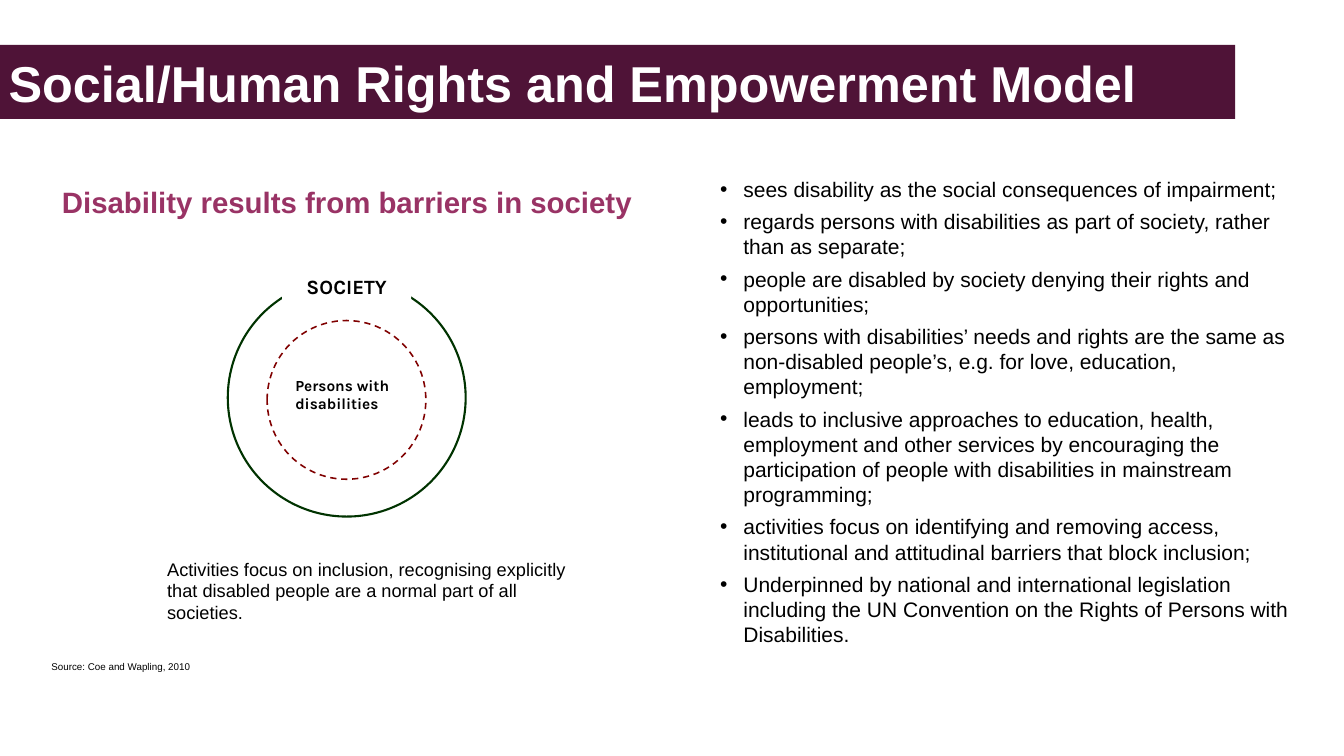
from dataclasses import dataclass

from lxml import etree
from pptx import Presentation
from pptx import util as u
from pptx.dml.color import RGBColor
from pptx.enum import dml, shapes, text
from pptx.oxml.ns import qn


@dataclass(frozen=True)
class Theme:
    """Colours, fonts and type sizes of the slide."""
    ink: str = "000000"
    paper: str = "FFFFFF"
    banner: str = "4F1337"
    accent: str = "993365"
    society: str = "003300"
    persons: str = "800000"
    body_font: str = "Arial"
    diagram_font: str = "Karla"
    title_size: int = 72
    heading_size: int = 42
    list_size: int = 30
    society_size: int = 29
    caption_size: int = 26
    persons_size: int = 22
    source_size: int = 14


@dataclass(frozen=True)
class Box:
    """A rectangle in inches."""
    left: float
    top: float
    width: float
    height: float

    def share(self, left, top, width, height):
        """Return an inner box given in percent of this one."""
        return Box(self.left + self.width * left / 100,
                   self.top + self.height * top / 100,
                   self.width * width / 100, self.height * height / 100)

    def emu(self):
        """Return left, top, width and height as lengths."""
        return [u.Inches(v) for v in (self.left, self.top, self.width, self.height)]


THEME = Theme()
SLIDE = Box(0, 0, 26.67, 15)
POINTS = [
    "sees disability as the social consequences of impairment;",
    "regards persons with disabilities as part of society, rather than as separate;",
    "people are disabled by society denying their rights and opportunities;",
    "persons with disabilities’ needs and rights are the same as non-disabled "
    "people’s, e.g. for love, education, employment;",
    "leads to inclusive approaches to education, health, employment and other services "
    "by encouraging the participation of people with disabilities in mainstream programming;",
    "activities focus on identifying and removing access, institutional and attitudinal "
    "barriers that block inclusion;",
    "Underpinned by national and international legislation including the UN Convention "
    "on the Rights of Persons with Disabilities.",
]


def rgb(value):
    """Turn a hex string into a colour."""
    return RGBColor.from_string(value)


def place(placeholder, box):
    """Move a placeholder into a box."""
    placeholder.left, placeholder.top, placeholder.width, placeholder.height = box.emu()


def set_bullet(paragraph, mark=None):
    """Give a paragraph a hanging bullet, or none."""
    props = paragraph._p.get_or_add_pPr()
    props.set("marL", str(u.Inches(0.5) if mark else 0))
    props.set("indent", str(u.Inches(-0.46) if mark else 0))
    for default in props.findall(qn("a:defRPr")):
        props.remove(default)
        props.append(default)
    bullet = []
    if mark:
        colour = etree.Element(qn("a:buClr"))
        etree.SubElement(colour, qn("a:srgbClr"), val=THEME.ink)
        bullet = [colour, etree.Element(qn("a:buFont"), typeface=THEME.body_font),
                  etree.Element(qn("a:buChar"), char=mark)]
    else:
        bullet = [etree.Element(qn("a:buNone"))]
    props.extend(bullet)


def write(shape, lines, size, colour=THEME.ink, font=THEME.body_font, bold=False,
          align=text.PP_ALIGN.LEFT, anchor=text.MSO_ANCHOR.TOP,
          insets=(0.1, 0.05, 0.1, 0.05), prepare=None):
    """Fill a shape with formatted paragraphs and return them."""
    frame = shape.text_frame
    frame.text = "\n".join(lines)
    frame.word_wrap = True
    frame.auto_size = text.MSO_AUTO_SIZE.NONE
    frame.vertical_anchor = anchor
    (frame.margin_left, frame.margin_top,
     frame.margin_right, frame.margin_bottom) = map(u.Inches, insets)
    for paragraph in frame.paragraphs:
        paragraph.alignment = align
        paragraph.space_before = u.Pt(0)
        if prepare:
            prepare(paragraph)
        paragraph.font.name = font
        paragraph.font.size = u.Pt(size)
        paragraph.font.bold = bold
        paragraph.font.color.rgb = rgb(colour)
    return frame.paragraphs


def add_banner(title, box):
    """Set the title on its coloured band."""
    place(title, box)
    title.fill.solid()
    title.fill.fore_color.rgb = rgb(THEME.banner)
    write(title, ["Social/Human Rights and Empowerment Model"], THEME.title_size,
          THEME.paper, bold=True, anchor=text.MSO_ANCHOR.MIDDLE,
          insets=(0.17, 0.06, 0.06, 0.06))


def add_heading(heading, box):
    """Set the statement above the diagram."""
    place(heading, box)
    statement, = write(heading, ["Disability results from barriers in society"],
                       THEME.heading_size, THEME.accent, bold=True,
                       align=text.PP_ALIGN.CENTER, prepare=set_bullet)
    statement.line_spacing = 0.9


def add_points(points, box):
    """Set the bulleted features of the model."""
    place(points, box)
    features = write(points, POINTS, THEME.list_size,
                     prepare=lambda paragraph: set_bullet(paragraph, "•"))
    for feature in features[1:]:
        feature.space_before = u.Pt(10)


def add_ring(slide, box, colour, width):
    """Draw an unfilled circle."""
    ring = slide.shapes.add_shape(shapes.MSO_SHAPE.OVAL, *box.emu())
    ring.shadow.inherit = False
    ring.fill.background()
    ring.line.color.rgb = rgb(colour)
    ring.line.width = u.Pt(width)
    return ring


def add_diagram(slide, box):
    """Draw persons with disabilities inside the circle of society."""
    add_ring(slide, box.share(0, 2.68, 100, 97.32), THEME.society, 3)
    persons = add_ring(slide, box.share(16.53, 19.79, 66.74, 64.95), THEME.persons, 2.25)
    persons.line.dash_style = dml.MSO_LINE.DASH
    write(persons, ["Persons with disabilities"], THEME.persons_size,
          font=THEME.diagram_font, bold=True, insets=(0.1, 0.64, 0.1, 0.05))
    society = slide.shapes.add_shape(shapes.MSO_SHAPE.RECTANGLE,
                                     *box.share(22.88, 0, 54.24, 15.05).emu())
    society.shadow.inherit = False
    society.fill.solid()
    society.fill.fore_color.rgb = rgb(THEME.paper)
    society.line.fill.background()
    write(society, ["SOCIETY"], THEME.society_size, font=THEME.diagram_font,
          bold=True, align=text.PP_ALIGN.CENTER)


def add_note(slide, box, words, size, anchor=text.MSO_ANCHOR.TOP):
    """Add a plain text note."""
    write(slide.shapes.add_textbox(*box.emu()), [words], size, anchor=anchor)


def main():
    """Build and save the slide."""
    deck = Presentation()
    deck.slide_width, deck.slide_height = SLIDE.emu()[2:]
    slide = deck.slides.add_slide(deck.slide_layouts.get_by_name("Two Content"))
    title, heading, points = slide.placeholders
    add_banner(title, SLIDE.share(0, 5.93, 91.9, 9.8))
    add_heading(heading, SLIDE.share(1.35, 24.6, 48.93, 4.73))
    add_points(points, SLIDE.share(53.06, 23, 43.27, 65))
    add_diagram(slide, SLIDE.share(16.95, 36, 17.7, 32.33))
    add_note(slide, SLIDE.share(12.07, 73.47, 31.98, 9.4),
             "Activities focus on inclusion, recognising explicitly that disabled "
             "people are a normal part of all societies.", THEME.caption_size)
    add_note(slide, SLIDE.share(3.45, 87, 13.12, 2.47), "Source: Coe and Wapling, 2010",
             THEME.source_size, text.MSO_ANCHOR.MIDDLE)
    deck.save("out.pptx")


if __name__ == "__main__":
    main()
